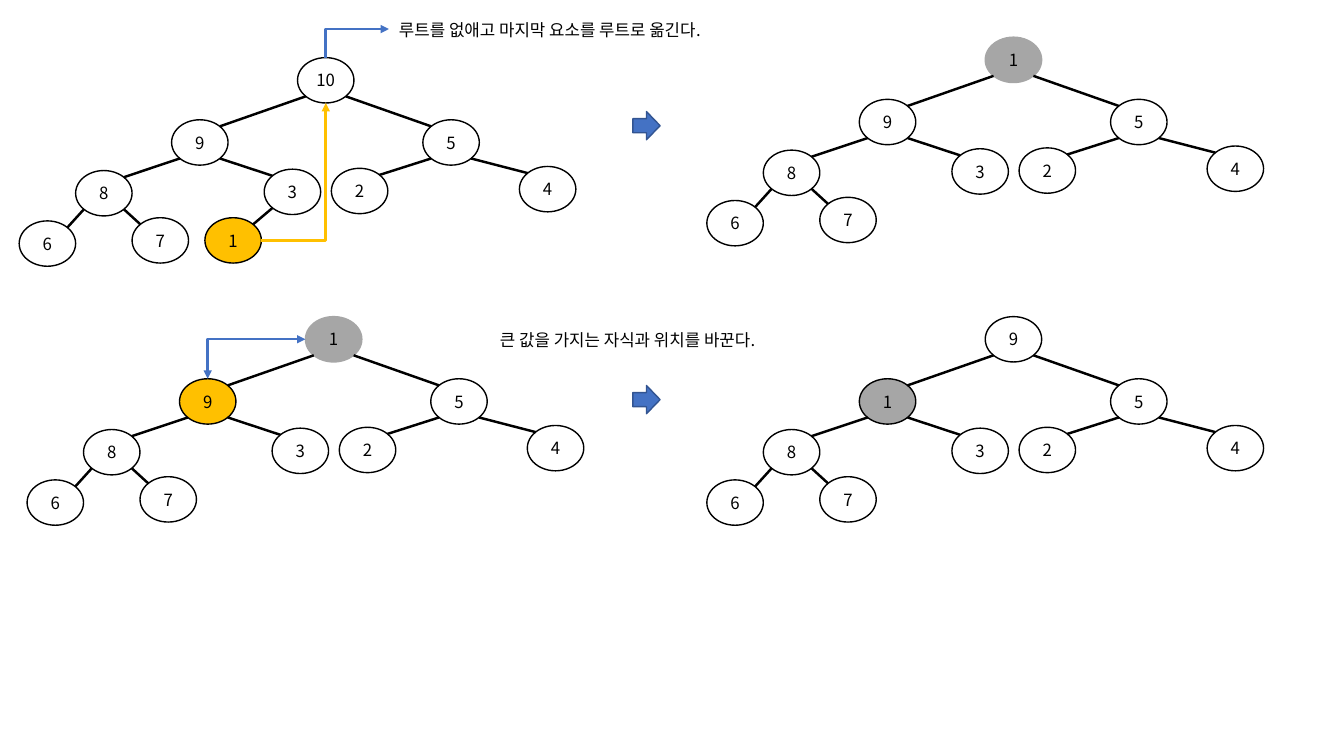
import dataclasses
import math
import typing

import lxml.etree
import pptx
import pptx.dml.color
import pptx.enum.shapes
import pptx.enum.text
import pptx.oxml.ns
import pptx.shapes.autoshape
import pptx.shapes.connector
import pptx.slide
import pptx.util

COLUMN = pptx.util.Inches(0.56)
ROW = pptx.util.Inches(0.45)
FONT = "Noto Sans CJK KR"
COLOURS = {
    "black": "000000",
    "gold": "FFC000",
    "grey": "A6A6A6",
    "blue": "4472C4",
    "dark blue": "325491",
}


class Point(typing.NamedTuple):
    column: float
    row: float


class Slot(typing.NamedTuple):
    column: float
    row: float
    parent: str = ""


@dataclasses.dataclass(frozen=True)
class Tree:
    root: Point
    values: dict[str, str]
    fills: dict[str, str]
    outlines: dict[str, str] = dataclasses.field(default_factory=dict)


@dataclasses.dataclass(frozen=True)
class Node:
    left: float
    top: float

    def at(self, across: float, down: float) -> Point:
        return Point(self.left + across, self.top + down)

    def diagonal(self, side: int, end: int) -> Point:
        reach = math.sqrt(0.5) / 2
        return self.at(0.5 + side * reach, 0.5 + end * reach)


@dataclasses.dataclass(frozen=True)
class Caption:
    text: str
    corner: Point
    width: float


SLOTS = {
    "left left": Slot(-3.93, 2.49, "left"),
    "left left left": Slot(-4.93, 3.6, "left left"),
    "left left right": Slot(-2.93, 3.53, "left left"),
    "left": Slot(-2.23, 1.37, "root"),
    "root": Slot(0, 0),
    "left right": Slot(-0.59, 2.46, "left"),
    "last": Slot(-1.64, 3.53, "left right"),
    "right left": Slot(0.6, 2.44, "right"),
    "right right": Slot(3.93, 2.4, "right"),
    "right": Slot(2.22, 1.37, "root"),
}
COMMON_VALUES = {
    "left left": "8",
    "left left left": "6",
    "left left right": "7",
    "left right": "3",
    "right left": "2",
    "right right": "4",
    "right": "5",
}
FULL_HEAP = Tree(
    Point(5.27, 1.27),
    COMMON_VALUES | {"root": "10", "left": "9", "last": "1"},
    {"last": "gold"},
)
MOVED_HEAP = Tree(
    Point(17.45, 0.82),
    COMMON_VALUES | {"root": "1", "left": "9"},
    {"root": "grey"},
    {"root": "grey"},
)
COMPARED_HEAP = Tree(
    Point(5.41, 6.98),
    MOVED_HEAP.values,
    {"root": "grey", "left": "gold"},
    {"root": "grey"},
)
SWAPPED_HEAP = Tree(
    Point(17.45, 6.98),
    COMMON_VALUES | {"root": "9", "left": "1"},
    {"left": "grey"},
)
CAPTIONS = (
    Caption("루트를 없애고 마지막 요소를 루트로 옮긴다.", Point(6.89, 0.33), 6.38),
    Caption("큰 값을 가지는 자식과 위치를 바꾼다.", Point(8.68, 7.16), 5.46),
)
STEP_ARROWS = (Point(11.2, 2.47), Point(11.2, 8.51))


def across(columns: float) -> int:
    return round(columns * COLUMN)


def down(rows: float) -> int:
    return round(rows * ROW)


def colour(name: str) -> pptx.dml.color.RGBColor:
    return pptx.dml.color.RGBColor.from_string(COLOURS[name])


def write_text(
    shape: pptx.shapes.autoshape.Shape,
    text: str,
    *,
    size: float = 12,
    colour_name: str = "black",
    align: pptx.enum.text.PP_ALIGN = pptx.enum.text.PP_ALIGN.LEFT,
    anchor: pptx.enum.text.MSO_ANCHOR = pptx.enum.text.MSO_ANCHOR.TOP,
    wrap: bool = False,
) -> None:
    frame = shape.text_frame
    frame.word_wrap = wrap
    frame.vertical_anchor = anchor
    paragraph = frame.paragraphs[0]
    paragraph.alignment = align
    run = paragraph.add_run()
    run.text = text
    run.font.size = pptx.util.Pt(size)
    run.font.name = FONT
    run.font.color.rgb = colour(colour_name)
    properties = run.font._element
    lxml.etree.SubElement(properties, pptx.oxml.ns.qn("a:ea"), typeface=FONT)


def add_figure(
    slide: pptx.slide.Slide,
    kind: pptx.enum.shapes.MSO_SHAPE,
    corner: Point,
    size: Point,
    fill: str,
    outline: str,
) -> pptx.shapes.autoshape.Shape:
    shape = slide.shapes.add_shape(
        kind, across(corner.column), down(corner.row), across(size.column), down(size.row)
    )
    shape.shadow.inherit = False
    if fill:
        shape.fill.solid()
        shape.fill.fore_color.rgb = colour(fill)
    else:
        shape.fill.background()
    shape.line.color.rgb = colour(outline)
    shape.line.width = pptx.util.Pt(1)
    return shape


def add_line(
    slide: pptx.slide.Slide,
    start: Point,
    end: Point,
    *,
    colour_name: str = "black",
    width: float = 1.75,
    bent: bool = False,
    arrowheads: tuple[str, ...] = (),
) -> None:
    connector = slide.shapes.add_connector(
        pptx.enum.shapes.MSO_CONNECTOR.STRAIGHT,
        across(start.column), down(start.row), across(end.column), down(end.row),
    )
    connector.line.color.rgb = colour(colour_name)
    connector.line.width = pptx.util.Pt(width)
    properties = connector.element.spPr
    if bent:
        properties.find(pptx.oxml.ns.qn("a:prstGeom")).set("prst", "bentConnector2")
    outline = properties.find(pptx.oxml.ns.qn("a:ln"))
    for arrowhead in arrowheads:
        lxml.etree.SubElement(outline, pptx.oxml.ns.qn(f"a:{arrowhead}"), type="triangle")
    lxml.etree.SubElement(properties, pptx.oxml.ns.qn("a:effectLst"))


def draw_tree(slide: pptx.slide.Slide, tree: Tree) -> dict[str, Node]:
    nodes: dict[str, Node] = {}
    for name, slot in SLOTS.items():
        if name not in tree.values:
            continue
        node = Node(tree.root.column + slot.column, tree.root.row + slot.row)
        nodes[name] = node
        shape = add_figure(
            slide, pptx.enum.shapes.MSO_SHAPE.OVAL, node.at(0, 0), Point(1, 1),
            tree.fills.get(name, ""), tree.outlines.get(name, "black"),
        )
        write_text(
            shape, tree.values[name],
            align=pptx.enum.text.PP_ALIGN.CENTER,
            anchor=pptx.enum.text.MSO_ANCHOR.MIDDLE,
            wrap=True,
        )
    for name, node in nodes.items():
        if SLOTS[name].parent:
            parent = nodes[SLOTS[name].parent]
            side = -1 if node.left < parent.left else 1
            add_line(slide, parent.diagonal(side, 1), node.diagonal(-side, -1))
    return nodes


def draw_caption(slide: pptx.slide.Slide, caption: Caption) -> None:
    box = slide.shapes.add_textbox(
        across(caption.corner.column), down(caption.corner.row), across(caption.width), down(0.67)
    )
    write_text(box, caption.text)
    box.text_frame.auto_size = pptx.enum.text.MSO_AUTO_SIZE.SHAPE_TO_FIT_TEXT


def main() -> None:
    presentation = pptx.Presentation()
    presentation.slide_width = pptx.util.Inches(13.33)
    presentation.slide_height = pptx.util.Inches(7.5)
    slide = presentation.slides.add_slide(presentation.slide_layouts[6])

    full = draw_tree(slide, FULL_HEAP)
    add_line(slide, full["last"].at(1, 0.5), full["root"].at(0.5, 1),
             colour_name="gold", width=2, bent=True, arrowheads=("tailEnd",))
    add_line(slide, Point(6.89, 0.64), full["root"].at(0.5, 0),
             colour_name="blue", width=2, bent=True, arrowheads=("headEnd",))
    draw_tree(slide, MOVED_HEAP)
    compared = draw_tree(slide, COMPARED_HEAP)
    add_line(slide, compared["root"].at(0, 0.5), compared["left"].at(0.5, 0),
             colour_name="blue", bent=True, arrowheads=("headEnd", "tailEnd"))
    draw_tree(slide, SWAPPED_HEAP)

    for corner in STEP_ARROWS:
        arrow = add_figure(slide, pptx.enum.shapes.MSO_SHAPE.DOWN_ARROW, corner,
                           Point(0.5, 0.6), "blue", "dark blue")
        arrow.rotation = 270
    for caption in CAPTIONS:
        draw_caption(slide, caption)
    presentation.save("out.pptx")


if __name__ == "__main__":
    main()
